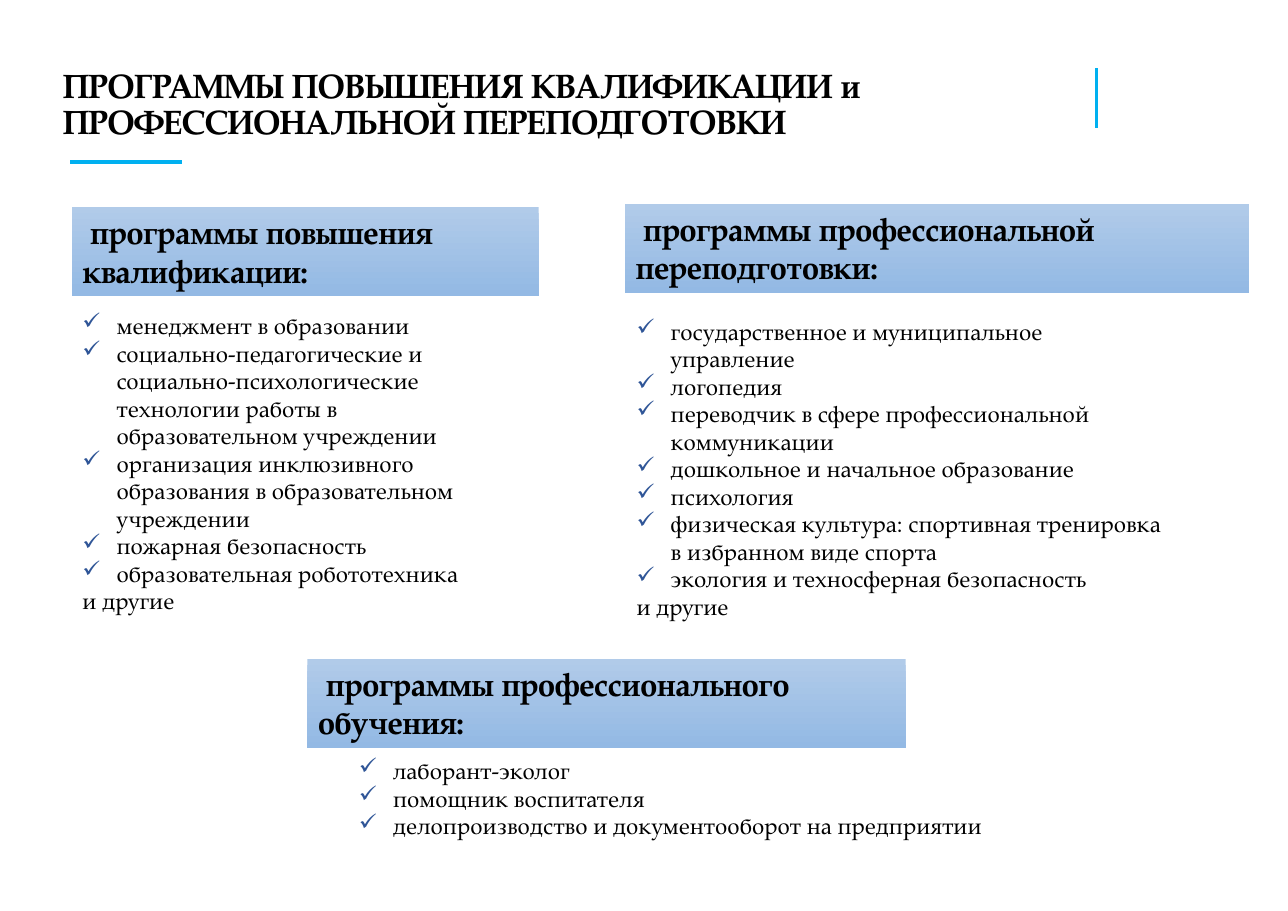
from dataclasses import dataclass
from lxml import etree
from pptx import Presentation
from pptx import util as u
from pptx.dml.color import RGBColor
from pptx.enum import shapes, text
from pptx.oxml.ns import qn

# Content: heading, its frame, list frame, list alignment, items, closing line
TITLE = "ПРОГРАММЫ ПОВЫШЕНИЯ КВАЛИФИКАЦИИ и ПРОФЕССИОНАЛЬНОЙ ПЕРЕПОДГОТОВКИ"
LEFT, JUSTIFY = text.PP_ALIGN.LEFT, text.PP_ALIGN.JUSTIFY
PROGRAMMES = [
    ("программы повышения квалификации:",
     (0.65, 1.88, 4.24, 0.81), (0.65, 2.78, 3.81, 2.87), LEFT,
     ["менеджмент в образовании",
      "социально-педагогические и социально-психологические "
      "технологии работы в образовательном учреждении",
      "организация инклюзивного образования в образовательном учреждении",
      "пожарная безопасность",
      "образовательная робототехника"],
     "и другие"),
    ("программы профессиональной переподготовки:",
     (5.67, 1.85, 5.67, 0.81), (5.68, 2.83, 5, 3.64), LEFT,
     ["государственное и муниципальное управление",
      "логопедия",
      "переводчик в сфере профессиональной коммуникации",
      "дошкольное и начальное образование",
      "психология",
      "физическая культура: спортивная тренировка в избранном виде спорта",
      "экология и техносферная безопасность"],
     "и другие"),
    ("программы профессионального обучения:",
     (2.79, 5.98, 5.43, 0.81), (3.16, 6.82, 6.36, 1.11), JUSTIFY,
     ["лаборант-эколог",
      "помощник воспитателя",
      "делопроизводство и документооборот на предприятии"],
     None),
]
# Accent lines: start, end, width in points
ACCENTS = [((0.64, 1.47), (1.65, 1.47), 3),
           ((9.95, 0.62), (9.95, 1.16), 2.25)]


@dataclass(frozen=True)
class Theme:
    font: str = "TeX Gyre Pagella"
    ink: str = "000000"
    accent: str = "00B0F0"
    check: str = "2F5597"
    gradient: tuple = ("B1CBE9", "93B9E4")
    title_size: float = 22
    heading_size: float = 21
    list_size: float = 15
    heading_indent: float = 0.07
    list_indent: float = 0.31


THEME = Theme()


def rgb(value):
    return RGBColor.from_string(value)


def inches(values):
    return [u.Inches(value) for value in values]


def set_indent(para, margin, first):
    props = para._p.get_or_add_pPr()
    props.set("marL", str(u.Inches(margin)))
    props.set("indent", str(u.Inches(first)))
    return props


def add_check(para):
    props = set_indent(para, THEME.list_indent, -THEME.list_indent)
    colour = etree.SubElement(props, qn("a:buClr"))
    etree.SubElement(colour, qn("a:srgbClr")).set("val", THEME.check)
    etree.SubElement(props, qn("a:buChar")).set("char", "✓")


def write(para, words, size, bold=False, align=LEFT, check=False, first=0):
    if check:
        add_check(para)
    elif first:
        set_indent(para, 0, first)
    para.alignment = align
    span = para.add_run()
    span.text = words
    span.font.name = THEME.font
    span.font.size = u.Pt(size)
    span.font.bold = bold
    span.font.color.rgb = rgb(THEME.ink)


def prepare(box, anchor=text.MSO_ANCHOR.TOP):
    frame = box.text_frame
    frame.word_wrap = True
    frame.auto_size = text.MSO_AUTO_SIZE.NONE
    frame.vertical_anchor = anchor
    return frame


def add_heading(page, words, place):
    box = page.shapes.add_shape(shapes.MSO_SHAPE.RECTANGLE, *inches(place))
    box.shadow.inherit = False
    box.line.fill.background()
    box.fill.gradient()
    box.fill.gradient_angle = 270
    for stop, colour in zip(box.fill.gradient_stops, THEME.gradient):
        stop.color.rgb = rgb(colour)
    write(prepare(box).paragraphs[0], words, THEME.heading_size,
          bold=True, first=THEME.heading_indent)


def add_list(page, place, align, items, closing):
    frame = prepare(page.shapes.add_textbox(*inches(place)))
    lines = [(item, True) for item in items]
    if closing:
        lines.append((closing, False))
    for index, (words, check) in enumerate(lines):
        para = frame.add_paragraph() if index else frame.paragraphs[0]
        write(para, words, THEME.list_size, align=align, check=check)


def add_accent(page, start, end, width):
    line = page.shapes.add_connector(
        shapes.MSO_CONNECTOR.STRAIGHT, *inches(start + end))
    line.line.color.rgb = rgb(THEME.accent)
    line.line.width = u.Pt(width)
    etree.SubElement(line._element.spPr, qn("a:effectLst"))


def main():
    deck = Presentation()
    deck.slide_width, deck.slide_height = inches((11.69, 8.27))
    page = deck.slides.add_slide(deck.slide_layouts[5])

    # Accent lines
    for accent in ACCENTS:
        add_accent(page, *accent)

    # Title
    title = page.shapes.title
    title.left, title.top, title.width, title.height = inches(
        (0.47, 0.52, 8.79, 0.88))
    para = prepare(title, text.MSO_ANCHOR.MIDDLE).paragraphs[0]
    para.line_spacing = 0.9
    write(para, TITLE, THEME.title_size, bold=True)

    # Programme groups
    for heading, heading_place, list_place, align, items, closing in PROGRAMMES:
        add_heading(page, heading, heading_place)
        add_list(page, list_place, align, items, closing)

    deck.save("out.pptx")


if __name__ == "__main__":
    main()
